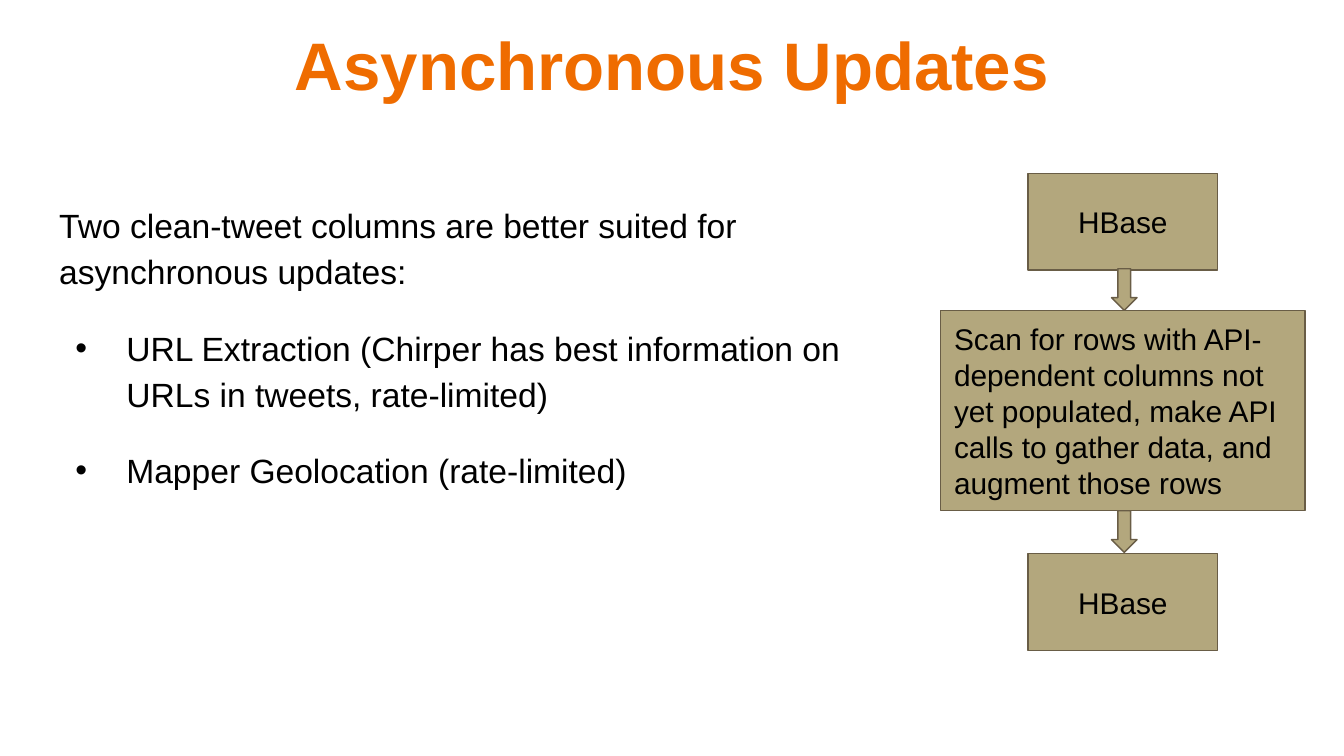
from pptx import Presentation
from pptx.dml.color import RGBColor as RGB
from pptx.enum.shapes import MSO_SHAPE as Kind
from pptx.enum.text import MSO_ANCHOR as Anchor, MSO_AUTO_SIZE as Auto, PP_ALIGN as Align
from pptx.util import Inches, Pt
from lxml.etree import SubElement as Sub
from pptx.oxml.ns import qn

ORANGE = RGB(0xEF, 0x6C, 0x00)
BLACK = RGB(0, 0, 0)
SAND = RGB(0xB3, 0xA7, 0x7D)
BROWN = RGB(0x69, 0x5D, 0x46)


def style(frame, size, color, align, anchor):
    frame.word_wrap = True
    frame.auto_size = Auto.NONE
    frame.vertical_anchor = anchor
    frame.margin_left = frame.margin_right = Inches(0.1)
    frame.margin_top = frame.margin_bottom = Inches(0.1)
    for para in frame.paragraphs:
        para.alignment = align
        for run in para.runs:
            run.font.name = "Arial"
            run.font.size = Pt(size)
            run.font.color.rgb = color


def draw(kind, left, top, width, height):
    shape = slide.shapes.add_shape(
        kind, Inches(left), Inches(top), Inches(width), Inches(height))
    shape.shadow.inherit = False
    shape.fill.solid()
    shape.fill.fore_color.rgb = SAND
    shape.line.color.rgb = BROWN
    shape.line.width = Pt(0.75)
    return shape


deck = Presentation()
deck.slide_width = Inches(10)
deck.slide_height = Inches(10) * 9 // 16
slide = deck.slides.add_slide(deck.slide_layouts[1])

title = slide.shapes.title
title.left, title.top = Inches(0.29), Inches(0.07)
title.width, title.height = Inches(9.42), Inches(0.77)
title.text_frame.text = "Asynchronous Updates"
style(title.text_frame, 36, ORANGE, Align.CENTER, Anchor.TOP)
title.text_frame.paragraphs[0].runs[0].font.bold = True

body = slide.placeholders[1]
body.left, body.top = Inches(0.34), Inches(1.38)
body.width, body.height = Inches(6.23), Inches(3.74)
body.text_frame.text = "\n".join([
    "Two clean-tweet columns are better suited for asynchronous updates:",
    "URL Extraction (Chirper has best information on URLs in tweets, rate-limited)",
    "Mapper Geolocation (rate-limited)",
])
for i, para in enumerate(body.text_frame.paragraphs):
    para.line_spacing = 1.15
    para.space_before = Pt(0)
    para.space_after = Pt(16)
    props = para._p.get_or_add_pPr()
    props.set("marL", str(Inches(0.5) if i else 0))
    props.set("indent", str(Inches(-0.38) if i else 0))
    if i:
        Sub(props, qn("a:buChar")).set("char", "•")
    else:
        Sub(props, qn("a:buNone"))
style(body.text_frame, 18, BLACK, Align.LEFT, Anchor.TOP)

scan = ("Scan for rows with API-dependent columns not yet populated, "
        "make API calls to gather data, and augment those rows")
for text, left, top, width, height, align in [
    ("HBase", 7.65, 1.29, 1.41, 0.72, Align.CENTER),
    (scan, 7, 2.31, 2.71, 1.49, Align.LEFT),
    ("HBase", 7.65, 4.12, 1.41, 0.72, Align.CENTER),
]:
    box = draw(Kind.RECTANGLE, left, top, width, height)
    box.text_frame.text = text
    style(box.text_frame, 16, BLACK, align, Anchor.MIDDLE)

for top in (2, 3.8):
    draw(Kind.DOWN_ARROW, 8.27, top, 0.19, 0.31)

deck.save("out.pptx")
